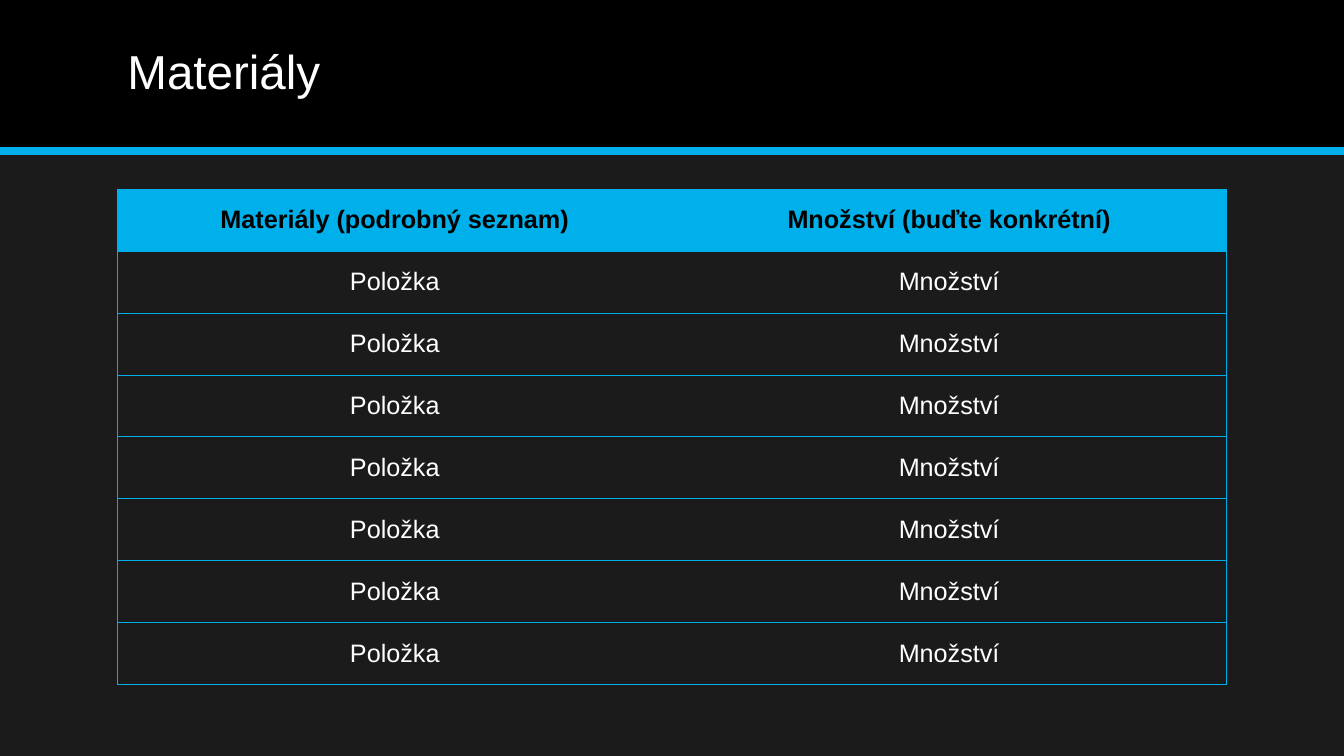
from lxml.etree import SubElement
from pptx import Presentation
from pptx.dml.color import RGBColor
from pptx.enum.shapes import MSO_CONNECTOR as Link, MSO_SHAPE as Shape
from pptx.enum.text import MSO_ANCHOR as Anchor, PP_ALIGN as Align
from pptx.oxml.ns import qn
from pptx.util import Pt

PX = 9525
BLACK = RGBColor(0x00, 0x00, 0x00)
WHITE = RGBColor(0xFF, 0xFF, 0xFF)
GREY = RGBColor(0x1B, 0x1B, 0x1B)
BLUE = RGBColor(0x00, 0xB0, 0xEA)

LEFT, WIDTH = 112, 1056
BAND = 144
TOP, ROW = 180, 59


def style(par, size, color, bold=False):
    font = par.runs[0].font
    font.name = "Arial"
    font.size = Pt(size)
    font.bold = bold
    font.color.rgb = color


def edge(cell, side, shown):
    line = SubElement(cell._tc.get_or_add_tcPr(), qn(f"a:ln{side}"), w=str(Pt(0.5)))
    if shown:
        fill = SubElement(line, qn("a:solidFill"))
        SubElement(fill, qn("a:srgbClr"), val=str(BLUE))
    else:
        SubElement(line, qn("a:noFill"))


prs = Presentation()
prs.slide_width = 1280 * PX
prs.slide_height = 720 * PX
slide = prs.slides.add_slide(prs.slide_layouts[6])
slide.background.fill.solid()
slide.background.fill.fore_color.rgb = GREY

band = slide.shapes.add_shape(Shape.RECTANGLE, 0, 0, 1280 * PX, BAND * PX)
band.shadow.inherit = False
band.fill.solid()
band.fill.fore_color.rgb = BLACK
band.line.fill.background()

rule = slide.shapes.add_connector(Link.STRAIGHT, 0, BAND * PX, 1280 * PX, BAND * PX)
rule.line.color.rgb = BLUE
rule.line.width = Pt(6)
SubElement(rule._element.spPr, qn("a:effectLst"))

title = slide.shapes.add_textbox(LEFT * PX, 13 * PX, WIDTH * PX, 115 * PX)
frame = title.text_frame
frame.word_wrap = True
frame.vertical_anchor = Anchor.MIDDLE
frame.text = "Materiály"
frame.paragraphs[0].line_spacing = 0.9
style(frame.paragraphs[0], 34, WHITE)

rows = [("Materiály (podrobný seznam)", "Množství (buďte konkrétní)")]
rows += [("Položka", "Množství")] * 7
grid = slide.shapes.add_table(
    len(rows), 2, LEFT * PX, TOP * PX, WIDTH * PX, len(rows) * ROW * PX
).table
grid.horz_banding = False

for r, texts in enumerate(rows):
    grid.rows[r].height = ROW * PX
    for c, text in enumerate(texts):
        cell = grid.cell(r, c)
        cell.text = text
        cell.vertical_anchor = Anchor.MIDDLE
        par = cell.text_frame.paragraphs[0]
        par.alignment = Align.CENTER
        style(par, 18, WHITE if r else BLACK, r == 0)
        for side, shown in (("L", c == 0), ("R", c == 1), ("T", True), ("B", True)):
            edge(cell, side, shown)
        if r:
            cell.fill.background()
        else:
            cell.fill.solid()
            cell.fill.fore_color.rgb = BLUE

prs.save("out.pptx")
